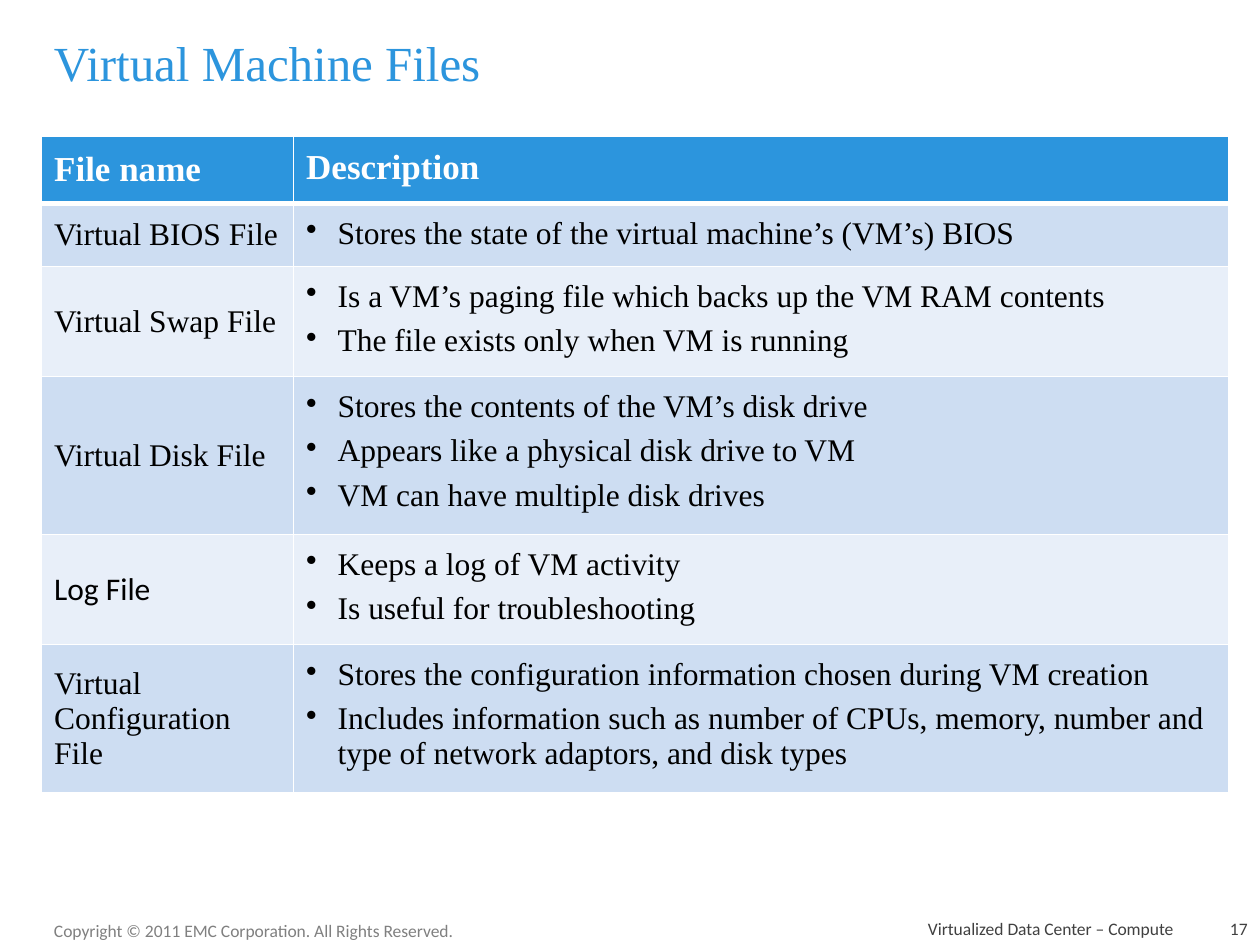
from lxml.etree import SubElement
from pptx import Presentation
from pptx.dml.color import RGBColor
from pptx.enum.text import MSO_ANCHOR as Anchor, PP_ALIGN as Align
from pptx.oxml import parse_xml
from pptx.oxml.ns import nsdecls, qn
from pptx.util import Inches, Pt

SERIF, SANS = "Times New Roman", "Calibri"
BLUE, WHITE, BLACK = "2C95DD", "FFFFFF", "000000"
BANDS = "CDDDF2", "E8EFF9"

# text, (left, top, width, height), size, font, colour, anchor, alignment
LABELS = [
    ("Virtual Machine Files", (0.33, 0.08, 9.25, 0.83),
     28, SERIF, BLUE, Anchor.MIDDLE, Align.LEFT),
    ("Copyright © 2011 EMC Corporation. All Rights Reserved.",
     (0.33, 7.25, 3.42, 0.27), 10, SANS, "808080", Anchor.TOP, Align.LEFT),
    ("Virtualized Data Center – Compute", (4.83, 7.25, 4.58, 0.25),
     10, SANS, "404040", Anchor.BOTTOM, Align.RIGHT),
    ("17", (9.5, 7.25, 0.5, 0.25),
     10, SANS, "404040", Anchor.BOTTOM, Align.RIGHT),
]
HEADS = ["File name", "Description"]
# file, font of its name, description points, row height
FILES = [
    ("Virtual BIOS File", SERIF,
     ["Stores the state of the virtual machine’s (VM’s) BIOS"], 0.48),
    ("Virtual Swap File", SERIF,
     ["Is a VM’s paging file which backs up the VM RAM contents",
      "The file exists only when VM is running"], 0.83),
    ("Virtual Disk File", SERIF,
     ["Stores the contents of the VM’s disk drive",
      "Appears like a physical disk drive to VM",
      "VM can have multiple disk drives"], 1.18),
    ("Log File", SANS,
     ["Keeps a log of VM activity", "Is useful for troubleshooting"], 0.83),
    ("Virtual Configuration File", SERIF,
     ["Stores the configuration information chosen during VM creation",
      "Includes information such as number of CPUs, memory, number and "
      "type of network adaptors, and disk types"], 1.1),
]
WIDTHS = [2, 7.42]
HEAD_H = 0.5


def style(para, size, font, color, bold=False):
    for run in para.runs:
        run.font.size = Pt(size)
        run.font.name = font
        run.font.bold = bold
        run.font.color.rgb = RGBColor.from_string(color)


def add_label(slide, text, place, size, font, color, anchor, align):
    frame = slide.shapes.add_textbox(*map(Inches, place)).text_frame
    frame.word_wrap = True
    frame.vertical_anchor = anchor
    frame.text = text
    frame.paragraphs[0].alignment = align
    style(frame.paragraphs[0], size, font, color)


def add_bullet(para):
    props = para._p.get_or_add_pPr()
    props.set("marL", str(Inches(0.25)))
    props.set("indent", str(-Inches(0.25)))
    SubElement(props, qn("a:buChar")).set("char", "•")


def set_borders(cell, top, bottom):
    """Draw white lines round a cell; they must precede its fill."""
    props = cell._tc.get_or_add_tcPr()
    sides = [("L", 1), ("R", 1), ("T", top), ("B", bottom)]
    for spot, (side, width) in enumerate(sides):
        props.insert(spot, parse_xml(
            f'<a:ln{side} {nsdecls("a")} w="{Pt(width)}"><a:solidFill>'
            f'<a:srgbClr val="{WHITE}"/></a:solidFill></a:ln{side}>'))


def fill_cell(cell, lines, fill, size, font, color, bold=False,
              bullets=False, middle=False, top=1, bottom=1):
    cell.margin_left = cell.margin_right = Inches(0.1)
    cell.margin_top = cell.margin_bottom = Inches(0.1)
    cell.vertical_anchor = Anchor.MIDDLE if middle else Anchor.TOP
    cell.fill.solid()
    cell.fill.fore_color.rgb = RGBColor.from_string(fill)
    set_borders(cell, top, bottom)
    cell.text_frame.text = "\n".join(lines)
    for num, para in enumerate(cell.text_frame.paragraphs):
        if num:
            para.space_before = Pt(0.3 * size)
        if bullets:
            add_bullet(para)
        style(para, size, font, color, bold)


def add_files(slide):
    heights = [HEAD_H] + [row[-1] for row in FILES]
    place = (0.33, 1.08, sum(WIDTHS), sum(heights))
    table = slide.shapes.add_table(
        len(heights), len(WIDTHS), *map(Inches, place)).table
    for col, width in zip(table.columns, WIDTHS):
        col.width = Inches(width)
    for row, height in zip(table.rows, heights):
        row.height = Inches(height)
    for col, head in enumerate(HEADS):
        fill_cell(table.cell(0, col), [head], BLUE, 20, SERIF, WHITE,
                  bold=True, middle=col == 0, bottom=3)
    for num, (name, font, points, _) in enumerate(FILES, 1):
        band = BANDS[(num - 1) % 2]
        top = 3 if num == 1 else 1
        fill_cell(table.cell(num, 0), [name], band, 18, font, BLACK,
                  middle=True, top=top)
        fill_cell(table.cell(num, 1), points, band, 18, SERIF, BLACK,
                  bullets=True, top=top)


def main():
    deck = Presentation()
    deck.slide_width, deck.slide_height = Inches(10), Inches(7.5)
    slide = deck.slides.add_slide(deck.slide_layouts[6])
    for label in LABELS:
        add_label(slide, *label)
    add_files(slide)
    deck.save("out.pptx")


if __name__ == "__main__":
    main()
